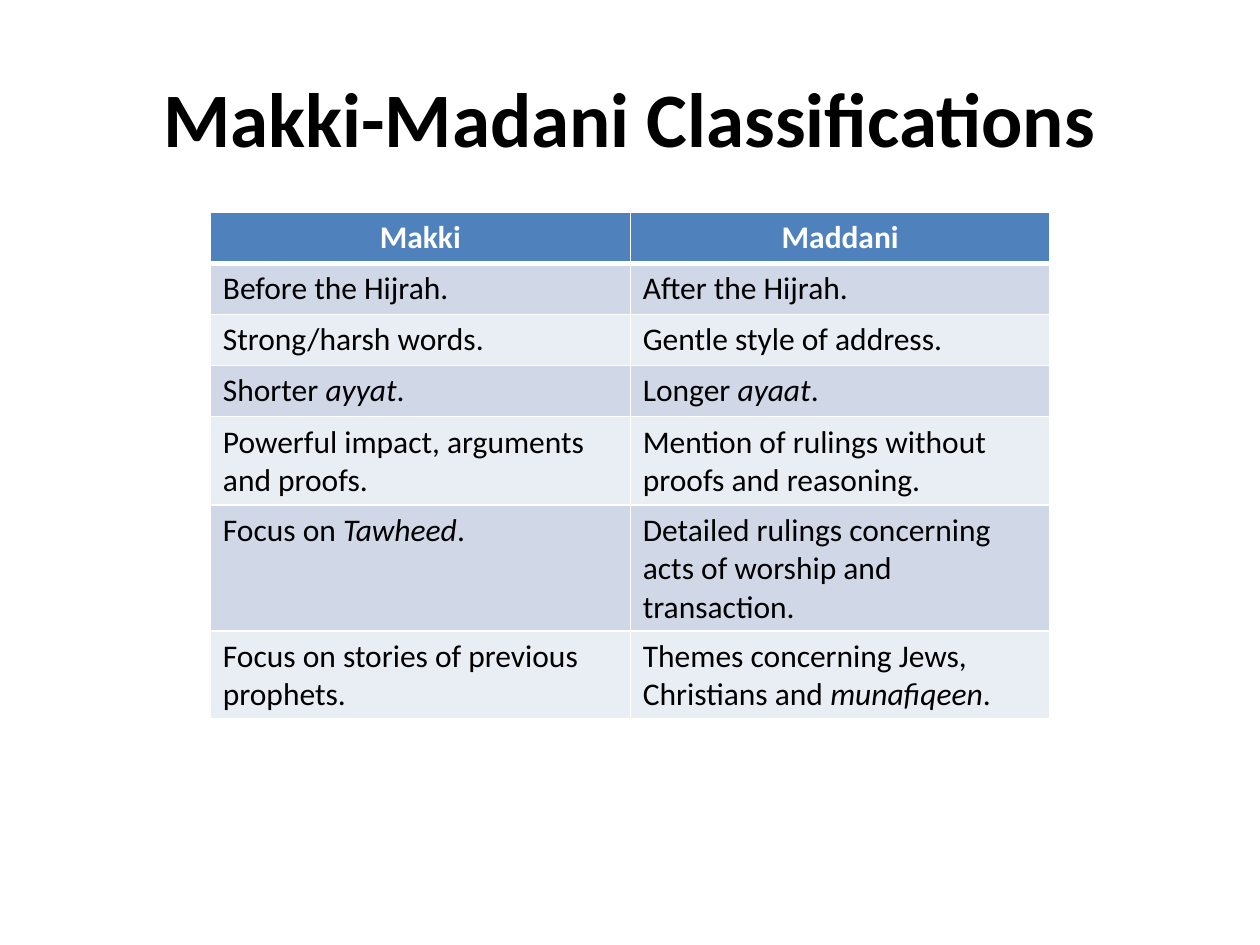
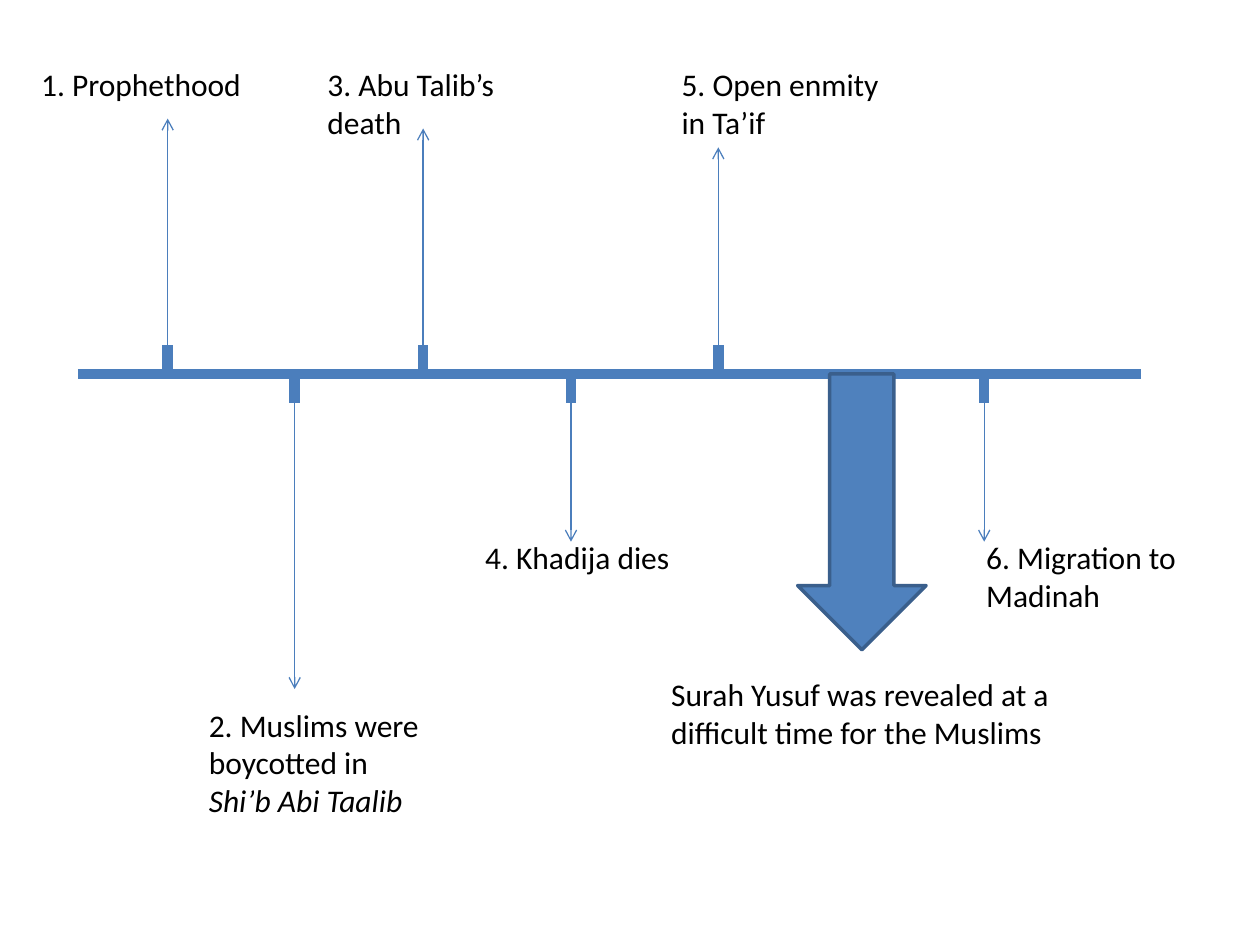
from dataclasses import dataclass

from lxml import etree
from pptx import Presentation
from pptx import util as u
from pptx.dml.color import RGBColor
from pptx.enum import shapes, text
from pptx.oxml.ns import qn


@dataclass(frozen=True)
class Theme:
    """Colours, font and sizes shared by the slides."""
    font: str = "Calibri"
    title: int = 44
    body: int = 18
    ink: str = "000000"
    paper: str = "FFFFFF"
    accent: str = "4F81BD"
    line: str = "4B7EBC"
    outline: str = "3A5F8C"
    bands: tuple = ("D0D8E8", "E9EDF4")


T = Theme()
AXIS_Y = 7.54
TICK = 0.59
LABEL_W = 4.78

ROWS = [
    ("Makki", "Maddani"),
    ("Before the Hijrah.", "After the Hijrah."),
    ("Strong/harsh words.", "Gentle style of address."),
    ("Shorter *ayyat*.", "Longer *ayaat*."),
    ("Powerful impact, arguments and proofs.",
     "Mention of rulings without proofs and reasoning."),
    ("Focus on *Tawheed*.",
     "Detailed rulings concerning acts of worship and transaction."),
    ("Focus on stories of previous prophets.",
     "Themes concerning Jews, Christians and *munafiqeen*."),
]

# Each event: axis x, arrow tip y, label left, label top, line count, wording
EVENTS = [
    (3.38, 2.39, 0.58, 1.19, 1, "1. Prophethood"),
    (5.94, 13.89, 3.96, 14.1, 3,
     "2. Muslims were boycotted in *Shi’b Abi Taalib*"),
    (8.53, 2.59, 6.35, 1.19, 2, "3. Abu Talib’s death"),
    (11.51, 10.92, 9.53, 10.72, 1, "4. Khadija dies"),
    (14.48, 2.97, 13.49, 1.19, 2, "5. Open enmity in Ta’if"),
    (19.84, 10.92, 19.63, 10.72, 2, "6. Migration to Madinah"),
]


def rgb(value):
    """Turn a hex string into a colour."""
    return RGBColor.from_string(value)


def write(tf, words, size=T.body, color=T.ink, bold=False, align=None):
    """Write one paragraph, with *starred* words in italics."""
    p = tf.paragraphs[0]
    p.alignment = align
    f = p.font
    f.name, f.size, f.bold = T.font, u.Pt(size), bold
    f.color.rgb = rgb(color)
    for i, part in enumerate(words.split("*")):
        if part:
            r = p.add_run()
            r.text = part
            if i % 2:
                r.font.italic = True


def add_text(s, x, y, w, h, words, anchor=text.MSO_ANCHOR.TOP, **style):
    """Add a wrapping text box."""
    tf = s.shapes.add_textbox(u.Cm(x), u.Cm(y), u.Cm(w), u.Cm(h)).text_frame
    tf.word_wrap = True
    tf.vertical_anchor = anchor
    write(tf, words, **style)


def add_label(s, x, y, w, lines, words):
    """Add a body label tall enough for its lines."""
    add_text(s, x, y, w, 0.25 + 0.77 * lines, words)


def add_line(s, x1, y1, x2, y2, width, arrow=False):
    """Add a straight line, optionally with an open arrowhead at its end."""
    c = s.shapes.add_connector(shapes.MSO_CONNECTOR.STRAIGHT,
                               *map(u.Cm, (x1, y1, x2, y2)))
    c.line.color.rgb = rgb(T.line)
    c.line.width = u.Pt(width)
    if arrow:
        etree.SubElement(c.line._get_or_add_ln(), qn("a:tailEnd"), type="arrow")
    etree.SubElement(c._element.spPr, qn("a:effectLst"))


def set_borders(cell, **widths):
    """Give a cell borders in the paper colour, with widths in points by side."""
    tc_pr = cell._tc.get_or_add_tcPr()
    for side, width in widths.items():
        ln = etree.SubElement(tc_pr, qn(f"a:ln{side}"), w=str(u.Pt(width)))
        fill = etree.SubElement(ln, qn("a:solidFill"))
        etree.SubElement(fill, qn("a:srgbClr"), val=T.paper)


def add_table(s, x, y, w, row_h, rows):
    """Add a table with a header row and banded body rows."""
    frame = s.shapes.add_table(len(rows), len(rows[0]), u.Cm(x), u.Cm(y),
                               u.Cm(w), u.Cm(row_h * len(rows)))
    for i, row in enumerate(rows):
        frame.table.rows[i].height = u.Cm(row_h)
        for j, words in enumerate(row):
            cell = frame.table.cell(i, j)
            set_borders(cell, L=1, R=1, T=3 if i == 1 else 1,
                        B=3 if i == 0 else 1)
            cell.fill.solid()
            if i == 0:
                cell.fill.fore_color.rgb = rgb(T.accent)
                write(cell.text_frame, words, color=T.paper, bold=True,
                      align=text.PP_ALIGN.CENTER)
            else:
                cell.fill.fore_color.rgb = rgb(T.bands[(i - 1) % 2])
                write(cell.text_frame, words)


def add_down_arrow(s, x, y, w, h):
    """Add a solid block arrow pointing down."""
    sp = s.shapes.add_shape(shapes.MSO_SHAPE.DOWN_ARROW,
                            *map(u.Cm, (x, y, w, h)))
    sp.shadow.inherit = False
    sp.fill.solid()
    sp.fill.fore_color.rgb = rgb(T.accent)
    sp.line.color.rgb = rgb(T.outline)
    sp.line.width = u.Pt(2)


def add_event(s, x, tip, left, top, lines, words):
    """Add a tick, an arrow and a label on one side of the axis."""
    tick_end = AXIS_Y + (TICK if tip > AXIS_Y else -TICK)
    add_line(s, x, AXIS_Y, x, tick_end, 6)
    add_label(s, left, top, LABEL_W, lines, words)
    add_line(s, x, tick_end, x, tip, 0.75, arrow=True)


def add_classifications(s):
    """Fill the comparison slide."""
    add_text(s, 1.27, 0.76, 22.86, 3.18, "Makki-Madani Classifications",
             anchor=text.MSO_ANCHOR.MIDDLE, size=T.title, bold=True,
             align=text.PP_ALIGN.CENTER)
    add_table(s, 4.24, 4.28, 16.93, 1.03, ROWS)


def add_timeline(s):
    """Fill the timeline slide."""
    add_line(s, 1.57, AXIS_Y, 23.01, AXIS_Y, 6)
    add_down_arrow(s, 16.08, AXIS_Y, 2.59, 5.56)
    add_label(s, 13.28, 13.49, 8.74, 2,
              "Surah Yusuf was revealed at a difficult time for the Muslims")
    for event in EVENTS:
        add_event(s, *event)


def main():
    """Build and save the slides."""
    prs = Presentation()
    prs.slide_width, prs.slide_height = u.Cm(25.4), u.Cm(19.05)
    for fill_slide in (add_classifications, add_timeline):
        fill_slide(prs.slides.add_slide(prs.slide_layouts[6]))
    prs.save("out.pptx")


if __name__ == "__main__":
    main()
